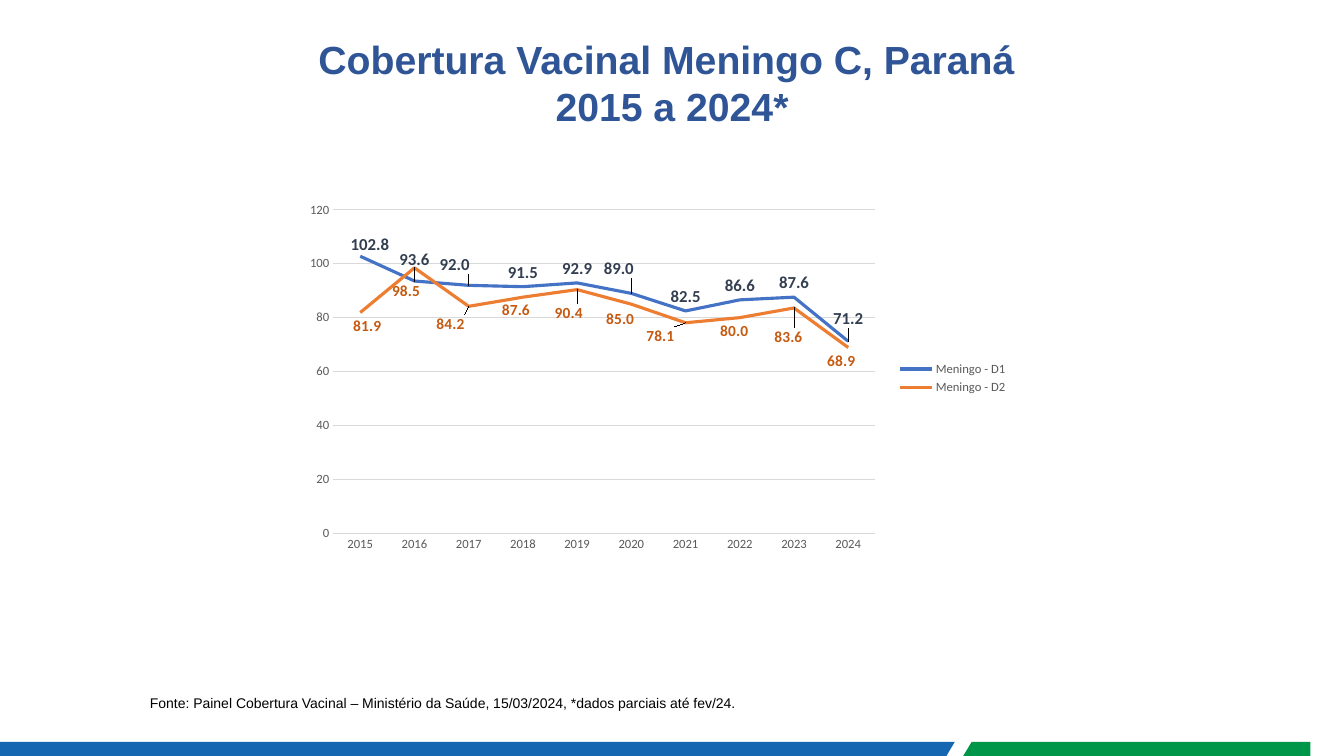
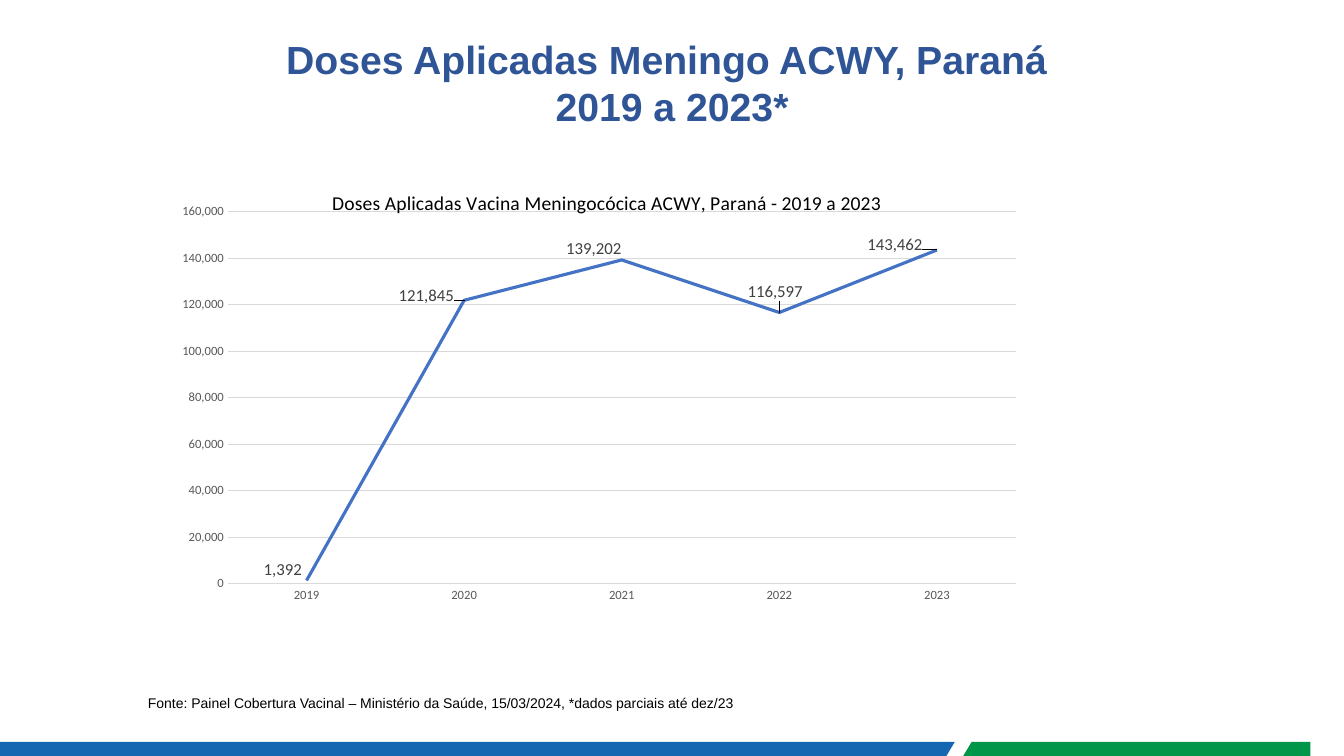
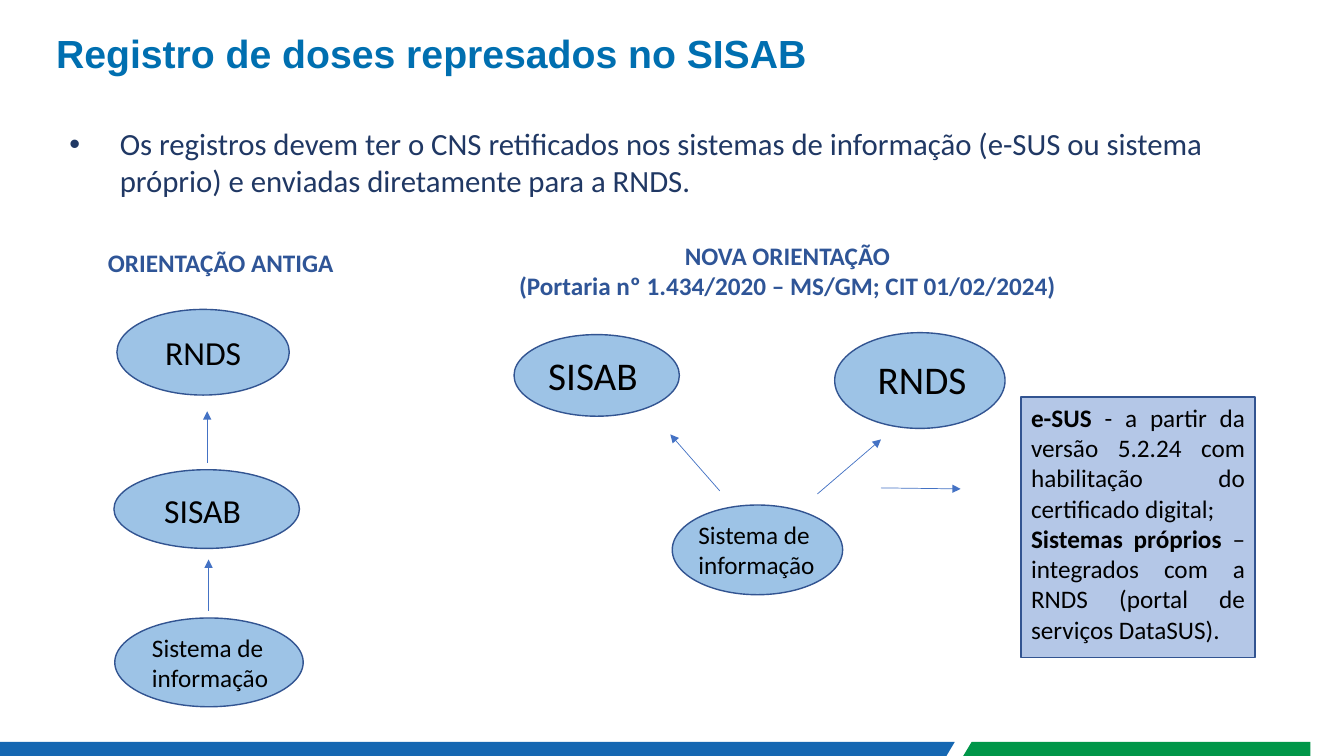
from lxml.etree import SubElement
from pptx import Presentation
from pptx.chart.data import CategoryChartData
from pptx.dml.color import RGBColor
from pptx.enum.chart import XL_CHART_TYPE, XL_LABEL_POSITION, XL_LEGEND_POSITION, XL_TICK_MARK
from pptx.enum.shapes import MSO_CONNECTOR, MSO_SHAPE
from pptx.enum.text import PP_ALIGN
from pptx.oxml import parse_xml
from pptx.oxml.ns import nsdecls, qn
from pptx.util import Pt

BAND_BLUE = RGBColor(0x15, 0x67, 0xB2)
BAND_GREEN = RGBColor(0x00, 0x96, 0x49)
TITLE_BLUE = RGBColor(0x2F, 0x55, 0x97)
BRIGHT_BLUE = RGBColor(0x00, 0x6F, 0xB0)
NAVY = RGBColor(0x20, 0x38, 0x64)
BLACK = RGBColor(0x00, 0x00, 0x00)
ELLIPSE_BLUE = RGBColor(0x9D, 0xC3, 0xE6)
NOTE_BLUE = RGBColor(0xB4, 0xC7, 0xE7)
OUTLINE = RGBColor(0x32, 0x54, 0x91)
LINE_BLUE = RGBColor(0x44, 0x72, 0xC4)
LINE_ORANGE = RGBColor(0xED, 0x7D, 0x31)
LABEL_SLATE = RGBColor(0x33, 0x3F, 0x50)
LABEL_ORANGE = RGBColor(0xC5, 0x5A, 0x11)
LABEL_GRAY = RGBColor(0x40, 0x40, 0x40)
AXIS_GRAY = RGBColor(0x59, 0x59, 0x59)
GRID_GRAY = RGBColor(0xD9, 0xD9, 0xD9)
TITLE_STYLE = dict(size=28, font="Arial", color=TITLE_BLUE, bold=True, align=PP_ALIGN.CENTER)
HEADING_STYLE = dict(size=18, color=TITLE_BLUE, bold=True, align=PP_ALIGN.CENTER)


def write_text(slide, lines, place, size, font="Calibri", color=BLACK, bold=False,
               align=PP_ALIGN.LEFT, spacing=None, bullet=False):
    """Write one paragraph per line; a (lead, rest) line gets a bold lead."""
    box = slide.shapes.add_textbox(*map(Pt, place))
    box.text_frame.word_wrap = True
    for number, line in enumerate(lines):
        para = box.text_frame.paragraphs[0] if number == 0 else box.text_frame.add_paragraph()
        para.alignment = align
        para.line_spacing = spacing
        if bullet:
            properties = para._p.get_or_add_pPr()
            properties.set("marL", str(Pt(36)))
            properties.set("indent", str(Pt(-36)))
            SubElement(properties, qn("a:buFont")).set("typeface", "Arial")
            SubElement(properties, qn("a:buChar")).set("char", "•")
        parts = [(line, bold)] if isinstance(line, str) else [(line[0], True), (line[1], False)]
        for text, strong in parts:
            span = para.add_run()
            span.text = text
            span.font.name, span.font.size, span.font.bold = font, Pt(size), strong
            span.font.color.rgb = color


def draw_line_chart(slide, place, categories, lines, number_format, axis_format, plot_place,
                    title=None, legend=False, maximum=None, step=None):
    data = CategoryChartData(number_format=number_format)
    data.categories = categories
    for line in lines:
        data.add_series(line["name"], line["values"])
    chart = slide.shapes.add_chart(XL_CHART_TYPE.LINE, *map(Pt, place), data).chart
    chart.font.name, chart.font.size = "Calibri", Pt(10)
    chart.plots[0].vary_by_categories = False

    # Axes, title and legend
    category_axis, value_axis = chart.category_axis, chart.value_axis
    for axis in (category_axis, value_axis):
        axis.major_tick_mark = axis.minor_tick_mark = XL_TICK_MARK.NONE
        axis.tick_labels.font.size = Pt(9)
        axis.tick_labels.font.color.rgb = AXIS_GRAY
    value_axis.tick_labels.number_format = axis_format
    value_axis.tick_labels.number_format_is_linked = False
    value_axis.format.line.fill.background()
    value_axis.minimum_scale, value_axis.maximum_scale = 0, maximum
    value_axis.major_unit = step
    for rule in (category_axis.format.line, value_axis.major_gridlines.format.line):
        rule.color.rgb, rule.width = GRID_GRAY, Pt(0.75)
    edges = {"layoutTarget": "inner", "xMode": "edge", "yMode": "edge"}
    layouts = [(chart._chartSpace.xpath("c:chart/c:plotArea")[0], 0,
                edges | dict(zip("xywh", plot_place)))]
    chart.has_title = title is not None
    if title:
        chart.chart_title.text_frame.text = title
        font = chart.chart_title.text_frame.paragraphs[0].runs[0].font
        font.size, font.bold, font.color.rgb = Pt(14), False, BLACK
        layouts.append((chart.chart_title._element, 1,
                        {"xMode": "edge", "yMode": "edge", "x": 0.18, "y": 0.04}))
    chart.has_legend = legend
    if legend:
        chart.legend.position = XL_LEGEND_POSITION.RIGHT
        chart.legend.include_in_layout = False
        chart.legend.font.size, chart.legend.font.color.rgb = Pt(9), AXIS_GRAY

    # Lines and their value labels, each shifted by an offset in points
    for series, line in zip(chart.plots[0].series, lines):
        series.smooth = False
        series.format.line.color.rgb, series.format.line.width = line["color"], Pt(2.25)
        series.data_labels.show_value = True
        series.data_labels.number_format = number_format
        series.data_labels.number_format_is_linked = False
        for index in range(len(categories)):
            label = series.points[index].data_label
            label.position = line["position"]
            label.font.name, label.font.size = "Calibri", Pt(line["size"])
            label.font.bold, label.font.color.rgb = line["bold"], line["label_color"]
        for element, (right, down) in zip(series._element.xpath("c:dLbls/c:dLbl"), line["offsets"]):
            layouts.append((element, 1, {"x": right / place[2], "y": down / place[3]}))

    # Manual layouts
    for parent, position, fields in layouts:
        for old in parent.findall(qn("c:layout")):
            parent.remove(old)
        layout = parse_xml(f"<c:layout {nsdecls('c')}><c:manualLayout/></c:layout>")
        for tag, value in fields.items():
            SubElement(layout[0], qn(f"c:{tag}")).set("val", str(value))
        parent.insert(position, layout)


deck = Presentation()
deck.slide_width, deck.slide_height = Pt(960), Pt(540)

# Pages with the two footer bands
BANDS = [
    (BAND_BLUE, [(0, 530), (682.5, 530), (676, 540), (0, 540)]),
    (BAND_GREEN, [(693.5, 530), (936, 530), (936, 540), (687.5, 540)]),
]
pages = [deck.slides.add_slide(deck.slide_layouts[6]) for _ in range(3)]
for page in pages:
    for color, corners in BANDS:
        builder = page.shapes.build_freeform(*corners[0], scale=Pt(1))
        builder.add_line_segments(corners[1:], close=True)
        band = builder.convert_to_shape()
        band.shadow.inherit = False
        band.fill.solid()
        band.fill.fore_color.rgb = color
        band.line.fill.background()
coverage_page, doses_page, records_page = pages

# Titles and sources of the chart pages
for page, heading, period, left, note in [
    (coverage_page, "Cobertura Vacinal Meningo C, Paraná ", "2015 a 2024*", 100, "fev/24."),
    (doses_page, "Doses Aplicadas Meningo ACWY, Paraná ", "2019 a 2023*", 98.6, "dez/23"),
]:
    write_text(page, [heading, period], (48, 21.6, 864, 90), **TITLE_STYLE)
    source = f"Fonte: Painel Cobertura Vacinal – Ministério da Saúde, 15/03/2024, *dados parciais até {note}"
    write_text(page, [source], (left, 494, 719, 31.7), 10, font="Arial", spacing=0.9)

# Coverage chart
first_dose = dict(
    name="Meningo - D1", color=LINE_BLUE, label_color=LABEL_SLATE, size=12, bold=True,
    position=XL_LABEL_POSITION.ABOVE,
    values=[102.8, 93.6, 92.0, 91.5, 92.9, 89.0, 82.5, 86.6, 87.6, 71.2],
    offsets=[(7, 2), (0, -5), (-10, -5), (0, 0), (0, 0), (-9, -8), (0, 0), (0, 0), (0, 0), (0, -6)])
second_dose = dict(
    name="Meningo - D2", color=LINE_ORANGE, label_color=LABEL_ORANGE, size=11, bold=True,
    position=XL_LABEL_POSITION.BELOW,
    values=[81.9, 98.5, 84.2, 87.6, 90.4, 85.0, 78.1, 80.0, 83.6, 68.9],
    offsets=[(5, 0), (-6, 7), (-13, 3), (-5, 0), (-6, 7), (-8, 1), (-18, 0), (-4, 0), (-4, 11), (-5, 0)])
draw_line_chart(coverage_page, (192, 132, 535, 276.5), [str(year) for year in range(2015, 2025)],
                [first_dose, second_dose], "0.0", "0", (0.086, 0.065, 0.724, 0.835),
                legend=True, maximum=120, step=20)

# Doses chart
doses = dict(
    name="Doses", color=LINE_BLUE, label_color=LABEL_GRAY, size=12, bold=False,
    position=XL_LABEL_POSITION.ABOVE,
    values=[1392, 121845, 139202, 116597, 143462],
    offsets=[(-17, 2), (-27, 7), (-20, 2), (-3, -5), (-30, 6)])
draw_line_chart(doses_page, (123, 119.5, 620.6, 326.2), [str(year) for year in range(2019, 2024)],
                [doses], "#,##0", "#,##0", (0.064, 0.097, 0.907, 0.815),
                title="Doses Aplicadas Vacina Meningocócica ACWY, Paraná - 2019 a 2023",
                maximum=160000, step=20000)

# Records page: title, instruction and headings
write_text(records_page, ["Registro de doses represados no SISAB"], (33, 17.3, 864, 90),
           **TITLE_STYLE | dict(color=BRIGHT_BLUE, align=PP_ALIGN.LEFT))
write_text(records_page, ["Os registros devem ter o CNS retificados nos sistemas de informação "
                          "(e-SUS ou sistema próprio) e enviadas diretamente para a RNDS."],
           (42.5, 85.7, 886, 60.5), 22, color=NAVY, bullet=True)
write_text(records_page, ["ORIENTAÇÃO ANTIGA"], (67.7, 172.8, 180, 29), **HEADING_STYLE)
write_text(records_page, ["NOVA ORIENTAÇÃO ", "(Portaria nº 1.434/2020 – MS/GM; CIT 01/02/2024) "],
           (280.8, 167.8, 567.4, 51), **HEADING_STYLE)

# Records page: systems and the note, as shape, fill, place
SYSTEM, NOTE_PLACE = "Sistema de informação", (729.4, 283.7, 167, 185.8)
NODES = [
    ((82, 441.4, 134.6, 63.4), SYSTEM, (101.5, 447.8, 105.8, 51), 18),
    ((81.4, 335.5, 132.5, 56.2), "SISAB", (110.2, 346.3, 83.5, 36), 24),
    ((83.5, 221, 123.1, 61.2), "RNDS", (110.9, 233.3, 83.5, 36), 24),
    ((480.2, 360.7, 121.7, 64.1), SYSTEM, (491.8, 367.2, 105.8, 51), 18),
    ((367.2, 239, 118.1, 58.3), "SISAB", (384.5, 247.7, 83.5, 41), 28),
    ((596.2, 237.6, 121.7, 68.4), "RNDS", (619.9, 250.6, 83.5, 41), 28),
]
outlines = [(MSO_SHAPE.OVAL, ELLIPSE_BLUE, node[0]) for node in NODES]
for kind, color, place in outlines + [(MSO_SHAPE.RECTANGLE, NOTE_BLUE, NOTE_PLACE)]:
    shape = records_page.shapes.add_shape(kind, *map(Pt, place))
    shape.shadow.inherit = False
    shape.fill.solid()
    shape.fill.fore_color.rgb = color
    shape.line.color.rgb, shape.line.width = OUTLINE, Pt(1)
for _, name, place, size in NODES:
    write_text(records_page, [name], place, size)
write_text(records_page, [
    ("e-SUS", " - a partir da versão 5.2.24 com habilitação do certificado digital;"),
    ("Sistemas próprios ", "– integrados com a RNDS (portal de serviços DataSUS)."),
], NOTE_PLACE, 18, align=PP_ALIGN.JUSTIFY)

# Records page: arrows, as start and end points
for ends in [
    (629.3, 348.5, 686.2, 349.2),
    (514.1, 350.6, 478.8, 310.3),
    (583.9, 352.8, 629.3, 313.9),
    (149, 436.3, 149, 399.6),
    (148, 330.5, 148, 293.8),
]:
    arrow = records_page.shapes.add_connector(MSO_CONNECTOR.STRAIGHT, *map(Pt, ends))
    arrow.line.color.rgb, arrow.line.width = LINE_BLUE, Pt(0.5)
    SubElement(arrow.line._get_or_add_ln(), qn("a:tailEnd")).set("type", "triangle")
    SubElement(arrow._element.spPr, qn("a:effectLst"))

deck.save("out.pptx")
